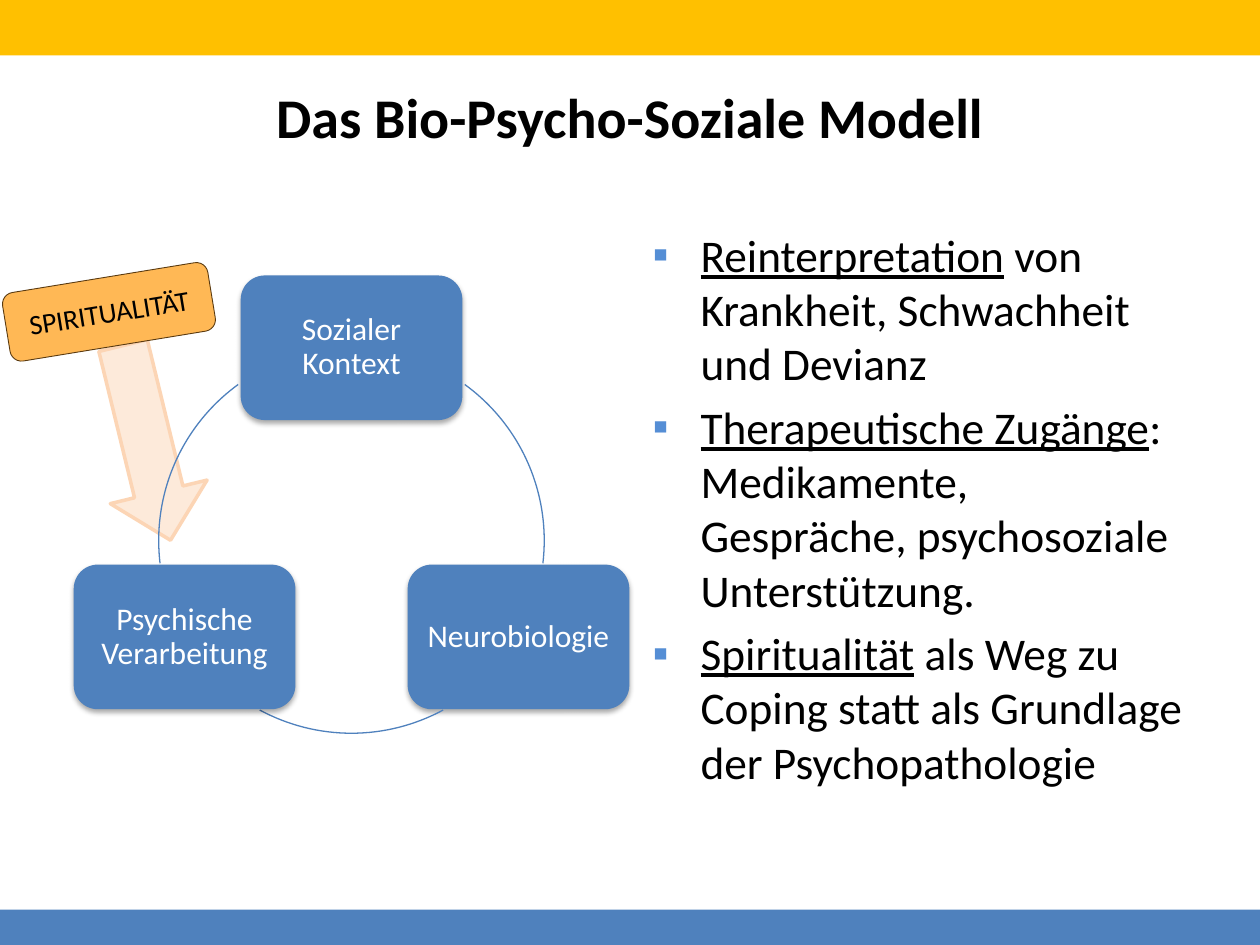
import math

import pptx
import pptx.dml.color
import pptx.enum.shapes
import pptx.enum.text
import pptx.oxml
import pptx.oxml.ns
import pptx.util

SHAPE = pptx.enum.shapes.MSO_SHAPE
ALIGN = pptx.enum.text.PP_ALIGN
ANCHOR = pptx.enum.text.MSO_ANCHOR
COLUMNS, ROWS = 100, 75
UNIT = pptx.util.Inches(10) // COLUMNS
BLUE = "4F81BD"
NODES = [("Sozialer\vKontext", 270), ("Neurobiologie", 30), ("Psychische\vVerarbeitung", 150)]
ARCS = [(306, 6.8), (61.6, 118.4), (173.2, 234)]
POINTS = [
    ("Reinterpretation", " von Krankheit, Schwachheit und Devianz"),
    ("Therapeutische Zugänge", ": Medikamente, Gespräche, psychosoziale Unterstützung."),
    ("Spiritualität", " als Weg zu Coping statt als Grundlage der Psychopathologie"),
]


def color(value):
    """Turn a hex string into a colour."""
    return pptx.dml.color.RGBColor.from_string(value)


def grid(*cells):
    """Turn columns and rows into lengths."""
    return [round(cell * UNIT) for cell in cells]


def place(shape, box):
    """Move a shape to a box of the grid."""
    shape.left, shape.top, shape.width, shape.height = grid(*box)


def add_xml(parent, xml):
    """Append one drawing element to a parent element."""
    declaration = pptx.oxml.ns.nsdecls("a")
    parent.append(pptx.oxml.parse_xml(xml.replace(" ", f" {declaration} ", 1)))


def set_font(paragraph, size, value, bold=False):
    """Format the font of a whole paragraph."""
    font = paragraph.font
    font.name, font.size, font.bold = "Calibri", pptx.util.Pt(size), bold
    font.color.rgb = color(value)


def add_shape(slide, kind, box, fill=None, line=None, width=0.75):
    """Add a preset shape with an optional fill and line."""
    shape = slide.shapes.add_shape(kind, *grid(*box))
    shape.shadow.inherit = False
    if fill:
        shape.fill.solid()
        shape.fill.fore_color.rgb = color(fill)
    else:
        shape.fill.background()
    if line:
        shape.line.color.rgb = color(line)
        shape.line.width = pptx.util.Pt(width)
    else:
        shape.line.fill.background()
    return shape


def add_label(shape, text, size, value, margin):
    """Write a centred label into a shape."""
    frame = shape.text_frame
    frame.word_wrap = True
    frame.vertical_anchor = ANCHOR.MIDDLE
    frame.margin_left = frame.margin_right = pptx.util.Inches(margin)
    paragraph = frame.paragraphs[0]
    paragraph.text = text
    paragraph.alignment = ALIGN.CENTER
    set_font(paragraph, size, value)
    return paragraph


def add_shadow(shape):
    """Give a shape a soft shadow below it."""
    effects = shape._element.spPr.find(pptx.oxml.ns.qn("a:effectLst"))
    add_xml(effects, '<a:outerShdw blurRad="39400" dist="22900" dir="5400000" rotWithShape="0">'
            '<a:srgbClr val="000000"><a:alpha val="35000"/></a:srgbClr></a:outerShdw>')


def build_bars(slide):
    """Draw the bars along the top and bottom edges."""
    for top, height, fill in [(0, 4.4, "FFC000"), (72.2, ROWS - 72.2, BLUE)]:
        add_shape(slide, SHAPE.RECTANGLE, (0, top, COLUMNS, height), fill)


def build_title(title, box, text):
    """Fill the title placeholder."""
    place(title, box)
    frame = title.text_frame
    frame.text = text
    frame.vertical_anchor = ANCHOR.MIDDLE
    frame.paragraphs[0].alignment = ALIGN.CENTER
    set_font(frame.paragraphs[0], 32, "000000", bold=True)


def build_cycle(slide, box):
    """Draw three nodes and the arcs between them on a circle."""
    left, top, diameter, _ = box
    radius = diameter / 2
    width, height = diameter * 0.575, diameter * 0.375
    for (text, angle), (start, end) in zip(NODES, ARCS):
        x = left + radius * (1 + math.cos(math.radians(angle)))
        y = top + radius * (1 + math.sin(math.radians(angle)))
        node_box = (x - width / 2, y - height / 2, width, height)
        node = add_shape(slide, SHAPE.ROUNDED_RECTANGLE, node_box, BLUE)
        add_shadow(node)
        add_label(node, text, 18, "FFFFFF", 0.04).line_spacing = 0.9
        arc = add_shape(slide, SHAPE.ARC, box, line=BLUE)
        arc.adjustments[0], arc.adjustments[1] = start * 0.6, end * 0.6


def build_arrow(slide, box):
    """Draw the pale arrow that points into the cycle."""
    arrow = add_shape(slide, SHAPE.RIGHT_ARROW, box, "FDEADA", "FCD5B5", 2)
    arrow.rotation = 76.3


def build_tag(slide, box, text):
    """Draw the tilted tag at the tail of the arrow."""
    tag = add_shape(slide, SHAPE.ROUNDED_RECTANGLE, box, "FFB855", "5A3A10", 0.5)
    tag.rotation = -9.3
    add_label(tag, text, 16, "000000", 0.1)


def build_list(body, box):
    """Fill the body placeholder with bulleted points."""
    place(body, box)
    frame = body.text_frame
    frame.word_wrap = True
    frame.auto_size = pptx.enum.text.MSO_AUTO_SIZE.NONE
    for index, (term, explanation) in enumerate(POINTS):
        paragraph = frame.paragraphs[0] if index == 0 else frame.add_paragraph()
        properties = paragraph._p.get_or_add_pPr()
        indent = pptx.util.Inches(0.38)
        properties.set("marL", str(indent))
        properties.set("indent", str(-indent))
        add_xml(properties, '<a:buClr ><a:srgbClr val="558ED5"/></a:buClr>')
        add_xml(properties, '<a:buFont typeface="Arial"/>')
        add_xml(properties, '<a:buChar char="▪"/>')
        paragraph.space_before = pptx.util.Pt(5 if index else 0)
        set_font(paragraph, 25.9, "000000")
        paragraph.add_run().text = term
        paragraph.runs[0].font.underline = True
        paragraph.add_run().text = explanation


def main():
    """Build and save the slide."""
    presentation = pptx.Presentation()
    presentation.slide_width, presentation.slide_height = grid(COLUMNS, ROWS)
    slide = presentation.slides.add_slide(presentation.slide_layouts[1])
    build_bars(slide)
    build_arrow(slide, (3.7, 31.2, 15.9, 7.9))
    build_title(slide.shapes.title, (5, 3, 90, 12.5), "Das Bio-Psycho-Soziale Modell")
    build_cycle(slide, (12.6, 27.6, 30.6, 30.6))
    build_list(slide.placeholders[1], (50.8, 17.5, 44.2, 49.5))
    build_tag(slide, (0.4, 22, 16.5, 5.5), "SPIRITUALITÄT")
    presentation.save("out.pptx")


if __name__ == "__main__":
    main()
